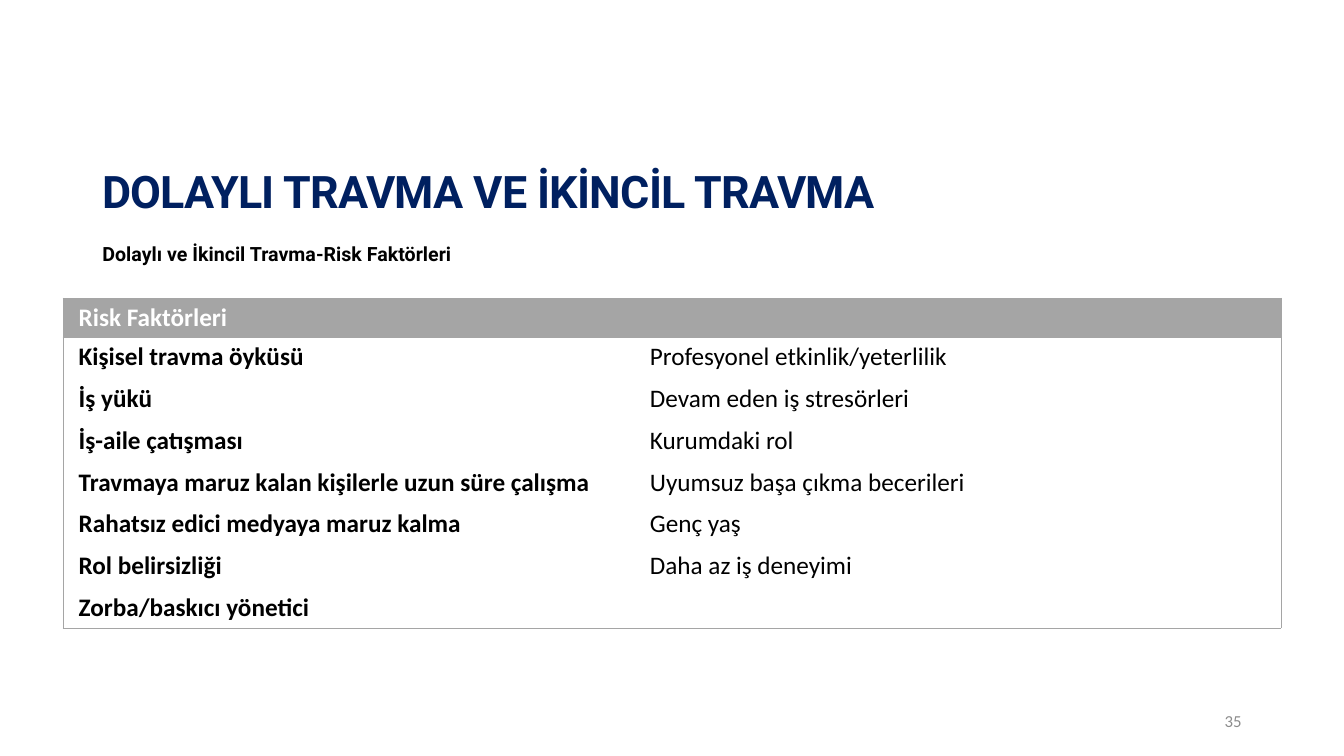
"""Build the slide on risk factors for indirect and secondary trauma."""
from dataclasses import dataclass

from lxml.etree import SubElement
from pptx import Presentation
from pptx.dml.color import RGBColor
from pptx.enum.text import MSO_ANCHOR, PP_ALIGN
from pptx.oxml.ns import qn
from pptx.slide import Slide
from pptx.table import _Cell
from pptx.util import Emu, Pt

EMU_PER_PX = 9525
NAVY = RGBColor(0x00, 0x20, 0x60)
BLACK = RGBColor(0x00, 0x00, 0x00)
WHITE = RGBColor(0xFF, 0xFF, 0xFF)
GRAY = RGBColor(0xA5, 0xA5, 0xA5)
NUMBER_GRAY = RGBColor(0x8C, 0x8C, 0x8C)

COLUMN_WIDTHS = (544, 616)
ROW_HEIGHTS = (37, 277)
CELL_INSET = 4
CELL_INDENT = 11


@dataclass(frozen=True)
class Label:
    """A one-line text box with its place and style."""

    text: str
    left: int
    top: int
    width: int
    height: int
    size: int
    font: str
    color: RGBColor
    bold: bool = False
    align: PP_ALIGN = PP_ALIGN.LEFT
    line_spacing: float = 1.0
    tracking: int = 0


@dataclass(frozen=True)
class FactorCell:
    """A table cell with its lines, style and outlined sides."""

    row: int
    column: int
    lines: tuple[str, ...]
    bold: bool
    sides: str


LABELS = (
    Label("DOLAYLI TRAVMA VE İKİNCİL TRAVMA", 88, 115, 1104, 139, 32, "Roboto",
          NAVY, bold=True, line_spacing=0.9, tracking=-50),
    Label("Dolaylı ve İkincil Travma-Risk Faktörleri", 88, 225, 1015, 33, 14,
          "Roboto", BLACK, bold=True, align=PP_ALIGN.JUSTIFY),
    Label("35", 904, 667, 288, 38, 12, "Calibri", NUMBER_GRAY,
          align=PP_ALIGN.RIGHT),
)

CELLS = (
    FactorCell(0, 0, ("Risk Faktörleri",), True, "LTB"),
    FactorCell(0, 1, (), True, "RTB"),
    FactorCell(1, 0, (
        "Kişisel travma öyküsü",
        "İş yükü",
        "İş-aile çatışması",
        "Travmaya maruz kalan kişilerle uzun süre çalışma",
        "Rahatsız edici medyaya maruz kalma",
        "Rol belirsizliği",
        "Zorba/baskıcı yönetici",
    ), True, "LTB"),
    FactorCell(1, 1, (
        "Profesyonel etkinlik/yeterlilik",
        "Devam eden iş stresörleri",
        "Kurumdaki rol",
        "Uyumsuz başa çıkma becerileri",
        "Genç yaş",
        "Daha az iş deneyimi",
    ), False, "RTB"),
)


def px(length: int) -> Emu:
    """Turn whole pixels into EMU."""
    return Emu(length * EMU_PER_PX)


def add_label(slide: Slide, label: Label) -> None:
    """Add one text box."""
    shape = slide.shapes.add_textbox(
        px(label.left), px(label.top), px(label.width), px(label.height))
    text_frame = shape.text_frame
    text_frame.word_wrap = True
    text_frame.vertical_anchor = MSO_ANCHOR.MIDDLE
    text_frame.text = label.text
    paragraph = text_frame.paragraphs[0]
    paragraph.alignment = label.align
    paragraph.line_spacing = label.line_spacing
    run = paragraph.runs[0]
    run.font.name = label.font
    run.font.size = Pt(label.size)
    run.font.bold = label.bold
    run.font.color.rgb = label.color
    if label.tracking:
        run._r.get_or_add_rPr().set("spc", str(label.tracking))


def set_borders(cell: _Cell, sides: str) -> None:
    """Outline the named sides of a cell and clear the others."""
    properties = cell._tc.get_or_add_tcPr()
    for side in "LRTB":
        line = SubElement(properties, qn(f"a:ln{side}"), w=str(Pt(0.5)))
        if side in sides:
            fill = SubElement(line, qn("a:solidFill"))
            SubElement(fill, qn("a:srgbClr"), val=str(GRAY))
        else:
            SubElement(line, qn("a:noFill"))


def fill_cell(cell: _Cell, content: FactorCell) -> None:
    """Write and style one table cell."""
    is_header = content.row == 0
    set_borders(cell, content.sides)
    if is_header:
        cell.fill.solid()
        cell.fill.fore_color.rgb = GRAY
    else:
        cell.fill.background()
    cell.margin_left = cell.margin_right = px(CELL_INSET)
    cell.margin_top = cell.margin_bottom = px(CELL_INSET)
    cell.text_frame.text = "\n".join(content.lines)
    for paragraph in cell.text_frame.paragraphs:
        paragraph._p.get_or_add_pPr().set("marL", str(px(CELL_INDENT)))
        paragraph.space_after = Pt(8)
        for run in paragraph.runs:
            run.font.name = "Calibri"
            run.font.size = Pt(18)
            run.font.bold = content.bold
            run.font.color.rgb = WHITE if is_header else BLACK


def add_factor_table(slide: Slide) -> None:
    """Add the table of risk factors."""
    table = slide.shapes.add_table(
        len(ROW_HEIGHTS), len(COLUMN_WIDTHS), px(60), px(284),
        px(sum(COLUMN_WIDTHS)), px(sum(ROW_HEIGHTS))).table
    table.horz_banding = False
    for column, width in zip(table.columns, COLUMN_WIDTHS):
        column.width = px(width)
    for row, height in zip(table.rows, ROW_HEIGHTS):
        row.height = px(height)
    for content in CELLS:
        fill_cell(table.cell(content.row, content.column), content)


def main() -> None:
    """Build and save the presentation."""
    presentation = Presentation()
    presentation.slide_width = px(1280)
    presentation.slide_height = px(720)
    slide = presentation.slides.add_slide(presentation.slide_layouts[6])
    for label in LABELS:
        add_label(slide, label)
    add_factor_table(slide)
    presentation.save("out.pptx")


if __name__ == "__main__":
    main()
